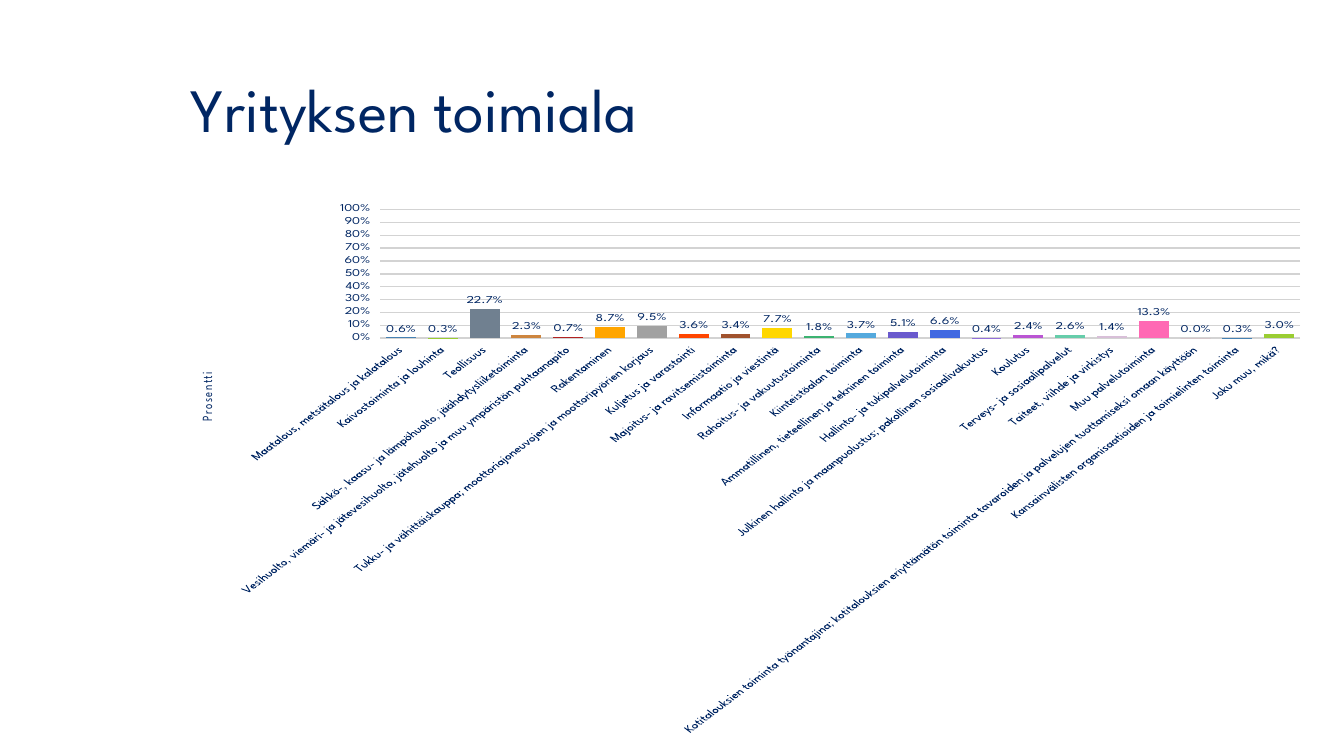
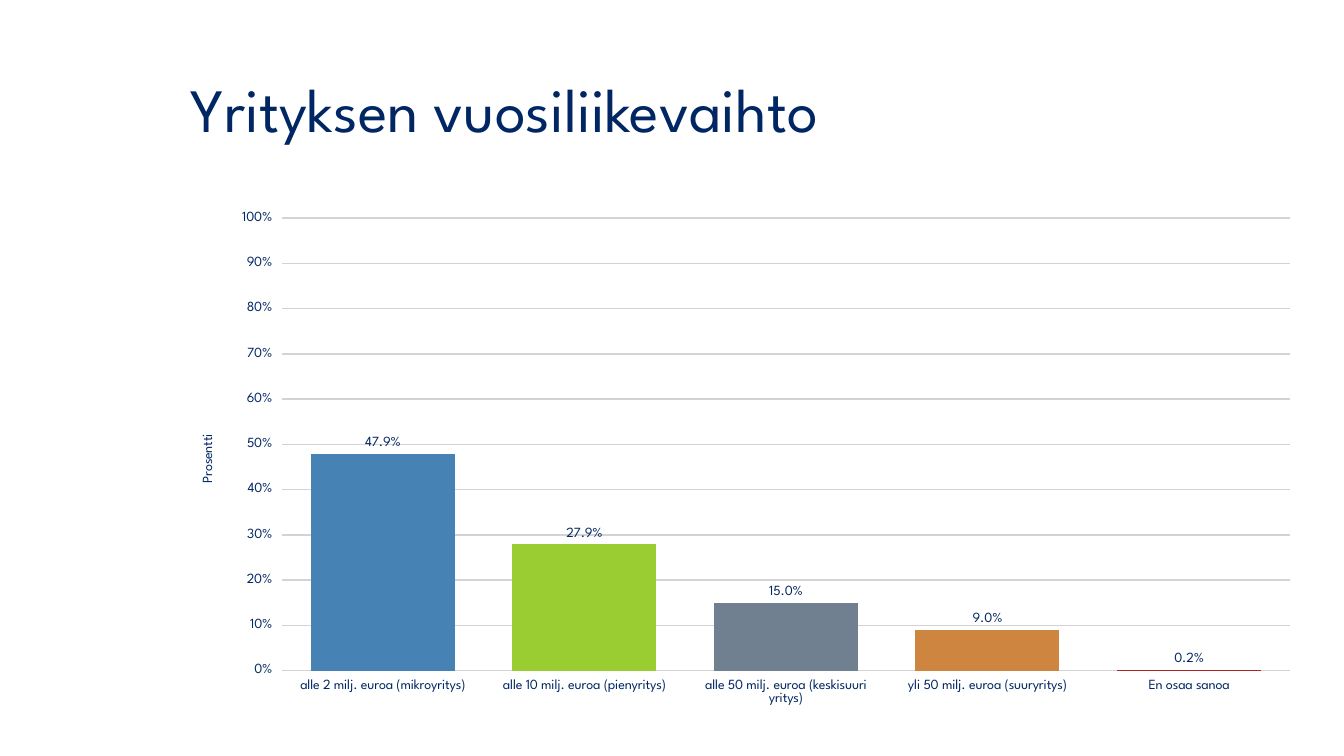
from dataclasses import dataclass
from itertools import cycle

from pptx import Presentation
from pptx.chart.data import CategoryChartData
from pptx.dml.color import RGBColor
from pptx.enum.chart import XL_CHART_TYPE as ChartType
from pptx.enum.chart import XL_LABEL_POSITION as LabelPos
from pptx.enum.chart import XL_TICK_MARK as Tick
from pptx.enum.text import MSO_ANCHOR as Anchor
from pptx.enum.text import MSO_AUTO_SIZE as AutoSize
from pptx.enum.text import PP_ALIGN as Align
from pptx.util import Emu, Pt

EMU_PER_PX = 9525
TITLE_ONLY = 5


@dataclass(frozen=True)
class Theme:
    font: str = "League Spartan"
    ink: str = "002663"
    grid: str = "D3D3D3"
    outline: str = "4682B4"
    title_size: int = 44
    chart_size: int = 18
    label_size: int = 10
    bars: tuple[str, ...] = (
        "4682B4", "9ACD32", "708090", "CD853F", "B22222", "FFA500", "A1A1A1",
        "FF4500", "A0522D", "FFD700", "3CB371", "54A9DD", "6A5ACD", "4169E1",
        "9370DB", "BA55D3", "66CDAA", "D8BFD8", "FF69B4", "DB7093",
    )


@dataclass(frozen=True)
class Box:
    left: int
    top: int
    width: int
    height: int

    def emu(self) -> tuple[Emu, ...]:
        return tuple(px(v) for v in (self.left, self.top, self.width, self.height))


@dataclass(frozen=True)
class Survey:
    title: str
    box: Box
    shares: dict[str, float]
    label_angle: int = 0


THEME = Theme()
TITLE_BOX = Box(172, 38, 1050, 139)

SURVEYS = (
    Survey(
        "Yrityksen toimiala",
        Box(172, 192, 1088, 508),
        {
            "Maatalous, metsätalous ja kalatalous": 0.006,
            "Kaivostoiminta ja louhinta": 0.003,
            "Teollisuus": 0.227,
            "Sähkö-, kaasu- ja lämpöhuolto, jäähdytysliiketoiminta": 0.023,
            "Vesihuolto, viemäri- ja jätevesihuolto, jätehuolto ja muu "
            "ympäristön puhtaanapito": 0.007,
            "Rakentaminen": 0.087,
            "Tukku- ja vähittäiskauppa; moottoriajoneuvojen ja "
            "moottoripyörien korjaus": 0.095,
            "Kuljetus ja varastointi": 0.036,
            "Majoitus- ja ravitsemistoiminta": 0.034,
            "Informaatio ja viestintä": 0.077,
            "Rahoitus- ja vakuutustoiminta": 0.018,
            "Kiinteistöalan toiminta": 0.037,
            "Ammatillinen, tieteellinen ja tekninen toiminta": 0.051,
            "Hallinto- ja tukipalvelutoiminta": 0.066,
            "Julkinen hallinto ja maanpuolustus; pakollinen "
            "sosiaalivakuutus": 0.004,
            "Koulutus": 0.024,
            "Terveys- ja sosiaalipalvelut": 0.026,
            "Taiteet, viihde ja virkistys": 0.014,
            "Muu palvelutoiminta": 0.133,
            "Kotitalouksien toiminta työnantajina; kotitalouksien "
            "eriyttämätön toiminta tavaroiden ja palvelujen "
            "tuottamiseksi omaan käyttöön": 0,
            "Kansainvälisten organisaatioiden ja toimielinten toiminta": 0.003,
            "Joku muu, mikä?": 0.03,
        },
        label_angle=-45,
    ),
    Survey(
        "Yrityksen vuosiliikevaihto",
        Box(172, 192, 1078, 490),
        {
            "alle 2 milj. euroa (mikroyritys)": 0.479,
            "alle 10 milj. euroa (pienyritys)": 0.279,
            "alle 50 milj. euroa (keskisuuri yritys)": 0.15,
            "yli 50 milj. euroa (suuryritys)": 0.09,
            "En osaa sanoa": 0.002,
        },
    ),
)


def px(value: int) -> Emu:
    return Emu(value * EMU_PER_PX)


def rgb(value: str) -> RGBColor:
    return RGBColor.from_string(value)


def set_font(font, size: int) -> None:
    font.name = THEME.font
    font.size = Pt(size)
    font.bold = False
    font.color.rgb = rgb(THEME.ink)


def add_title(s, text: str) -> None:
    sp = s.shapes.title
    sp.left, sp.top, sp.width, sp.height = TITLE_BOX.emu()
    tf = sp.text_frame
    tf.text = text
    tf.word_wrap = True
    tf.auto_size = AutoSize.NONE
    tf.vertical_anchor = Anchor.MIDDLE
    p = tf.paragraphs[0]
    p.alignment = Align.LEFT
    p.line_spacing = 0.9
    set_font(p.font, THEME.title_size)


def format_axis(axis) -> None:
    axis.major_tick_mark = Tick.OUTSIDE
    axis.minor_tick_mark = Tick.NONE
    axis.format.line.fill.background()
    set_font(axis.tick_labels.font, THEME.label_size)


def format_axes(chart, label_angle: int) -> None:
    cat_axis, val_axis = chart.category_axis, chart.value_axis
    for axis in (cat_axis, val_axis):
        format_axis(axis)
    cat_axis.has_major_gridlines = False
    if label_angle:
        body = cat_axis._element.txPr.bodyPr
        body.set("rot", str(label_angle * 60000))
        body.set("vert", "horz")

    val_axis.minimum_scale, val_axis.maximum_scale = 0, 1
    val_axis.major_unit = 0.1
    val_axis.tick_labels.number_format = "0%"
    val_axis.tick_labels.number_format_is_linked = False
    val_axis.has_major_gridlines = True
    line = val_axis.major_gridlines.format.line
    line.color.rgb = rgb(THEME.grid)
    line.width = Pt(1)
    tf = val_axis.axis_title.text_frame
    tf.text = "Prosentti"
    set_font(tf.paragraphs[0].font, THEME.label_size)


def format_bars(plot, count: int) -> None:
    plot.gap_width = 40
    plot.vary_by_categories = False
    series = plot.series[0]
    series.invert_if_negative = False
    series.format.fill.solid()
    series.format.fill.fore_color.rgb = rgb(THEME.bars[0])
    series.format.line.color.rgb = rgb(THEME.outline)
    series.format.line.width = Pt(0.75)
    for i, color in zip(range(count), cycle(THEME.bars)):
        fill = series.points[i].format.fill
        fill.solid()
        fill.fore_color.rgb = rgb(color)

    labels = series.data_labels
    labels.show_value = True
    labels.number_format = "0.0%"
    labels.number_format_is_linked = False
    labels.position = LabelPos.OUTSIDE_END
    set_font(labels.font, THEME.label_size)


def add_survey_chart(s, survey: Survey) -> None:
    data = CategoryChartData()
    data.categories = list(survey.shares)
    data.add_series("Series 1", list(survey.shares.values()))
    frame = s.shapes.add_chart(ChartType.COLUMN_CLUSTERED, *survey.box.emu(), data)
    chart = frame.chart
    chart.has_title = False
    chart.has_legend = False
    set_font(chart.font, THEME.chart_size)
    format_axes(chart, survey.label_angle)
    format_bars(chart.plots[0], len(survey.shares))


def main() -> None:
    prs = Presentation()
    prs.slide_width, prs.slide_height = px(1280), px(720)
    for survey in SURVEYS:
        s = prs.slides.add_slide(prs.slide_layouts[TITLE_ONLY])
        add_title(s, survey.title)
        add_survey_chart(s, survey)
    prs.save("out.pptx")


if __name__ == "__main__":
    main()
